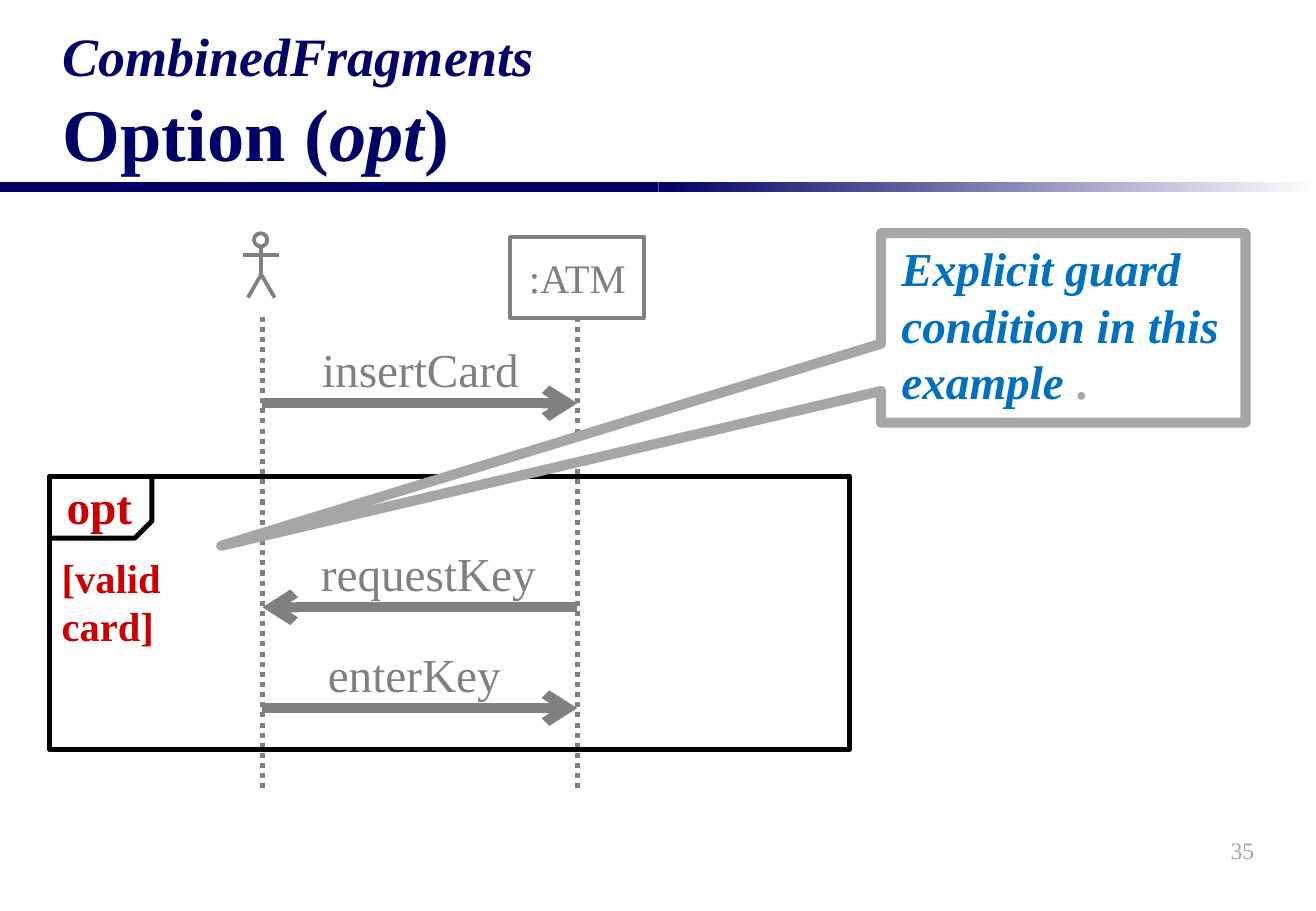
from dataclasses import dataclass

from lxml import etree
from pptx import Presentation
from pptx.dml.color import RGBColor
from pptx.enum.dml import MSO_LINE
from pptx.enum.shapes import MSO_CONNECTOR, MSO_SHAPE
from pptx.enum.text import MSO_ANCHOR, MSO_AUTO_SIZE, PP_ALIGN
from pptx.oxml.ns import qn
from pptx.util import Pt

RECT, OVAL, CALLOUT = MSO_SHAPE.RECTANGLE, MSO_SHAPE.OVAL, MSO_SHAPE.RECTANGULAR_CALLOUT
STRAIGHT, DOTTED = MSO_CONNECTOR.STRAIGHT, MSO_LINE.ROUND_DOT
LEFT, CENTER, RIGHT = PP_ALIGN.LEFT, PP_ALIGN.CENTER, PP_ALIGN.RIGHT
TOP, MIDDLE, BOTTOM = MSO_ANCHOR.TOP, MSO_ANCHOR.MIDDLE, MSO_ANCHOR.BOTTOM
GROW = MSO_AUTO_SIZE.SHAPE_TO_FIT_TEXT
PX = 9144


@dataclass(frozen=True)
class Theme:
    font: str = "Times New Roman"
    navy: str = "000066"
    white: str = "FFFFFF"
    black: str = "000000"
    gray: str = "808080"
    light: str = "A6A6A6"
    red: str = "CC0000"
    blue: str = "0070C0"
    title: int = 44
    subtitle: int = 32
    label: int = 28
    body: int = 24
    number: int = 14
    thin: float = 2.25
    frame: int = 3
    thick: int = 6


def rgb(color):
    return RGBColor.from_string(color)


class Diagram:
    def __init__(self, prs, theme):
        self.t = theme
        self.s = prs.slides.add_slide(prs.slide_layouts[6])

    def style(self, sp, fill=None, line=None, width=0):
        sp.shadow.inherit = False
        if fill:
            sp.fill.solid()
            sp.fill.fore_color.rgb = rgb(fill)
        else:
            sp.fill.background()
        if line:
            sp.line.color.rgb = rgb(line)
            sp.line.width = Pt(width)
        else:
            sp.line.fill.background()
        return sp

    def shape(self, kind, x, y, w, h, **style):
        sp = self.s.shapes.add_shape(kind, x * PX, y * PX, w * PX, h * PX)
        return self.style(sp, **style)

    def outline(self, points, **style):
        (x, y), *rest = [(a * PX, b * PX) for a, b in points]
        fb = self.s.shapes.build_freeform(x, y)
        fb.add_line_segments(rest, close=False)
        return self.style(fb.convert_to_shape(), **style)

    def line(self, x1, y1, x2, y2, width, dash=None, arrow=False):
        c = self.s.shapes.add_connector(STRAIGHT, x1 * PX, y1 * PX, x2 * PX, y2 * PX)
        c.line.color.rgb = rgb(self.t.gray)
        c.line.width = Pt(width)
        if dash:
            c.line.dash_style = dash
        sp_pr = c._element.spPr
        if arrow:
            etree.SubElement(sp_pr.find(qn("a:ln")), qn("a:tailEnd"), type="arrow")
        etree.SubElement(sp_pr, qn("a:effectLst"))

    def label(self, sp, text, size, color, align=LEFT, anchor=TOP, wrap=True,
              bold=False, italic=False):
        tf = sp.text_frame
        tf.word_wrap = wrap
        tf.vertical_anchor = anchor
        p = tf.paragraphs[0]
        p.alignment = align
        p.font.name = self.t.font
        p.font.size = Pt(size)
        p.font.color.rgb = rgb(color)
        p.font.bold, p.font.italic = bold, italic
        if text:
            p.add_run().text = text
        return p

    def text(self, x, y, w, h, text, size, color, grow=False, **style):
        sp = self.s.shapes.add_textbox(x * PX, y * PX, w * PX, h * PX)
        p = self.label(sp, text, size, color, **style)
        if grow:
            sp.text_frame.auto_size = GROW
        return p

    def title(self, x, y, w, h, subtitle, parts):
        p = self.text(x, y, w, h, "", self.t.title, self.t.navy, anchor=BOTTOM, bold=True)
        r = p.add_run()
        r.text = subtitle
        r.font.size, r.font.italic = Pt(self.t.subtitle), True
        p.add_line_break()
        for part, italic in parts:
            r = p.add_run()
            r.text, r.font.italic = part, italic

    def rule(self, y, h, half):
        self.shape(RECT, 0, y, half, h, fill=self.t.navy)
        sp = self.shape(RECT, half, y, half, h)
        sp.fill.gradient()
        sp.fill.gradient_angle = 0
        for stop, color in zip(sp.fill.gradient_stops, (self.t.navy, self.t.white)):
            stop.color.rgb = rgb(color)

    def lifeline(self, x):
        self.line(x, 261, x, 650, self.t.frame, dash=DOTTED)

    def actor(self, x):
        for x1, y1, x2, y2 in ((0, 226, 0, 195), (-11, 245, 0, 226),
                               (11, 245, 0, 226), (-15, 210, 15, 210)):
            self.line(x + x1, y1, x + x2, y2, self.t.thin)
        self.shape(OVAL, x - 6, 192, 11, 11, fill=self.t.white,
                   line=self.t.gray, width=self.t.thin)

    def message(self, text, start, end, y, x, w, align=CENTER):
        self.line(start, y, end, y, self.t.thick, arrow=True)
        self.text(x, y - 57, w, 57, text, self.t.label, self.t.gray,
                  align=align, wrap=False, grow=True)

    def callout(self, x, y, w, h, tip, text, ending):
        sp = self.shape(CALLOUT, x, y, w, h, fill=self.t.white,
                        line=self.t.light, width=self.t.thick)
        sp.adjustments[0], sp.adjustments[1] = tip
        p = self.label(sp, text, self.t.label, self.t.blue, bold=True, italic=True)
        p.space_before = Pt(self.t.label * 0.2)
        p._p.get_or_add_pPr().set("marL", str(7 * PX))
        r = p.add_run()
        r.text = ending
        r.font.italic = False
        r.font.color.rgb = rgb(self.t.light)


def main():
    prs = Presentation()
    prs.slide_width, prs.slide_height = 1083 * PX, 750 * PX
    t = Theme()
    d = Diagram(prs, t)

    d.rule(150, 8, 542)
    d.text(816, 675, 226, 50, "35", t.number, t.light, align=RIGHT, anchor=MIDDLE)
    d.title(42, 29, 1000, 121, "CombinedFragments",
            (("Option (", False), ("opt", True), (")", False)))

    user, atm = 216, 475
    head = d.shape(RECT, 420, 195, 110, 67, line=t.gray, width=t.thin)
    d.label(head, ":ATM", t.body, t.gray, align=CENTER, anchor=MIDDLE, wrap=False)
    d.lifeline(atm)
    d.lifeline(user)
    d.actor(215)

    d.message("insertCard", user, atm, 332, 253, 186)
    d.message("requestKey", atm, user, 500, 253, 199)
    d.message("enterKey", user, atm, 583, 260, 164, align=LEFT)

    d.shape(RECT, 41, 392, 658, 225, line=t.black, width=t.frame)
    d.outline(((41, 443), (111, 443), (125, 429), (125, 393)),
              line=t.black, width=t.frame)
    d.text(41, 450, 133, 91, "[valid card]", t.body, t.red, bold=True, grow=True)
    d.callout(725, 192, 300, 156, (-2.31, 1.15),
              "Explicit guard condition in this example ", ".")
    d.text(45, 388, 75, 57, "opt", t.label, t.red, bold=True, wrap=False, grow=True)

    prs.save("out.pptx")


if __name__ == "__main__":
    main()
